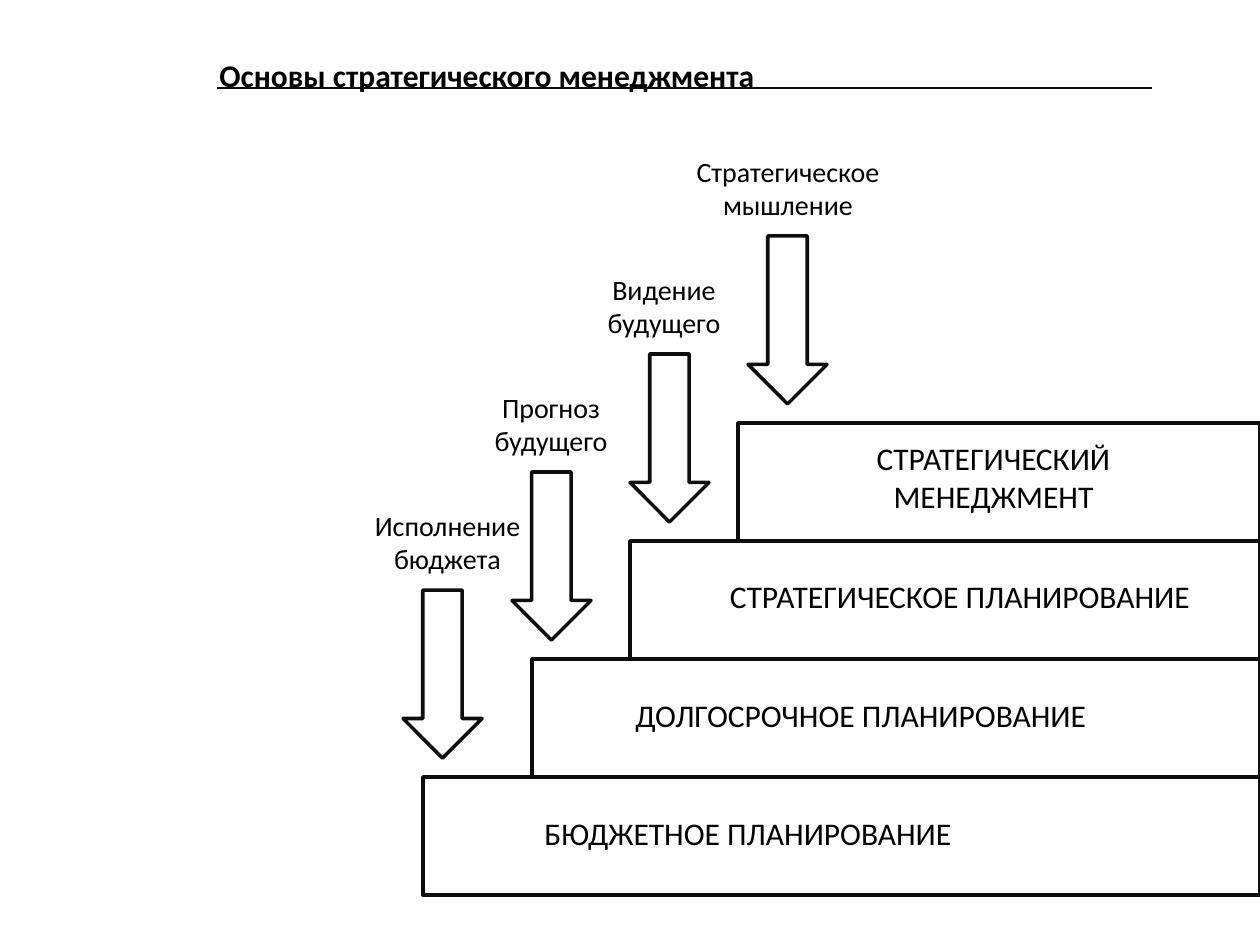
from pptx import Presentation
from pptx.dml.color import RGBColor
from pptx.enum.shapes import MSO_CONNECTOR, MSO_SHAPE
from pptx.enum.text import MSO_AUTO_SIZE, PP_ALIGN
from pptx.oxml.ns import qn
from pptx.util import Emu, Pt
from lxml.etree import SubElement

TITLE = "Основы стратегического менеджмента"
INK = "0D0D0D"
STEPS = [
    dict(left=423, name="БЮДЖЕТНОЕ ПЛАНИРОВАНИЕ", box=(532, 808, 561, 50),
         align=PP_ALIGN.LEFT, arrow=403, cause="Исполнение бюджета", note=(344, 207)),
    dict(left=532, name="ДОЛГОСРОЧНОЕ ПЛАНИРОВАНИЕ", box=(551, 690, 620, 50),
         arrow=512, cause="Прогноз будущего", note=(472, 158)),
    dict(left=630, name="СТРАТЕГИЧЕСКОЕ ПЛАНИРОВАНИЕ", box=(689, 571, 542, 50),
         arrow=630, cause="Видение будущего", note=(571, 186)),
    dict(left=738, name="СТРАТЕГИЧЕСКИЙ МЕНЕДЖМЕНТ", box=(836, 433, 315, 90),
         arrow=748, cause="Стратегическое мышление", note=(650, 276)),
]
WIDE, TALL = 1260, 945
BASE, RISE = 777, 118
ARROW_W, ARROW_H, ARROW_UP = 79, 168, 187
NOTE_H, NOTE_UP = 80, 275


def px(n):
    return Emu(round(n * 914400 / 126))


def color(code):
    return RGBColor.from_string(code)


def add_text(slide, text, box, size=18, bold=False, align=PP_ALIGN.CENTER):
    frame = slide.shapes.add_textbox(*map(px, box)).text_frame
    frame.word_wrap = True
    frame.auto_size = MSO_AUTO_SIZE.SHAPE_TO_FIT_TEXT
    para = frame.paragraphs[0]
    para.alignment = align
    run = para.add_run()
    run.text = text
    run.font.name = "Calibri"
    run.font.size = Pt(size)
    run.font.bold = bold
    run.font.color.rgb = color("000000")


def add_form(slide, kind, box):
    form = slide.shapes.add_shape(kind, *map(px, box))
    form.shadow.inherit = False
    form.fill.background()
    form.line.color.rgb = color(INK)
    form.line.width = Pt(2)


def add_rule(slide, x1, x2, y):
    rule = slide.shapes.add_connector(
        MSO_CONNECTOR.STRAIGHT, px(x1), px(y), px(x2), px(y))
    rule.line.color.rgb = color(INK)
    rule.line.width = Pt(0.75)
    SubElement(rule._element.spPr, qn("a:effectLst"))


def main():
    deck = Presentation()
    deck.slide_width, deck.slide_height = px(WIDE), px(TALL)
    slide = deck.slides.add_slide(deck.slide_layouts[6])
    add_text(slide, TITLE, (207, 50, 640, 50), bold=True, align=PP_ALIGN.LEFT)
    add_rule(slide, 217, 1152, 88)
    for i, step in enumerate(STEPS):
        top = BASE - i * RISE
        left = step["left"]
        add_form(slide, MSO_SHAPE.RECTANGLE, (left, top, WIDE - left, RISE))
        add_text(slide, step["name"], step["box"],
                 align=step.get("align", PP_ALIGN.CENTER))
        add_form(slide, MSO_SHAPE.DOWN_ARROW,
                 (step["arrow"], top - ARROW_UP, ARROW_W, ARROW_H))
        x, width = step["note"]
        add_text(slide, step["cause"], (x, top - NOTE_UP, width, NOTE_H), size=16)
    deck.save("out.pptx")


if __name__ == "__main__":
    main()
